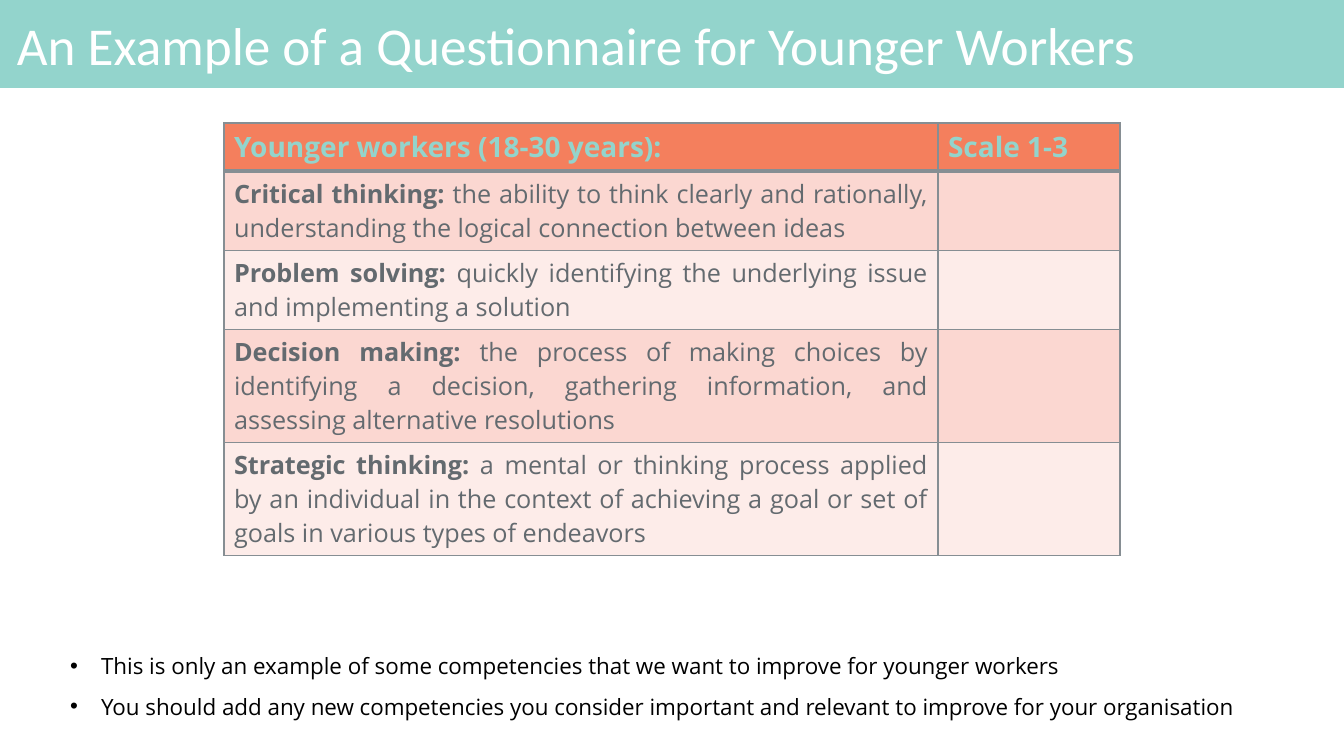
from dataclasses import dataclass

from lxml.etree import SubElement
from pptx import Presentation
from pptx.dml.color import RGBColor
from pptx.enum.shapes import MSO_SHAPE
from pptx.enum.text import MSO_ANCHOR, MSO_AUTO_SIZE, PP_ALIGN
from pptx.oxml import parse_xml
from pptx.oxml.ns import nsdecls, qn
from pptx.util import Pt

EMU_PER_PX = 914400 / 100.8


def px(length):
    return round(length * EMU_PER_PX)


@dataclass(frozen=True)
class Theme:
    teal: str = "93D4CC"
    white: str = "FFFFFF"
    black: str = "000000"
    grey: str = "636A6F"
    border: str = "868E93"
    orange: str = "F47F5D"
    bands: tuple = ("FBD7D1", "FDECE9")
    title_font: str = "Calibri"
    body_font: str = "Open Sans"
    title_size: int = 38
    header_size: int = 20
    cell_size: int = 18
    list_size: int = 16


class SlideBuilder:
    def __init__(self, page, theme):
        self.page = page
        self.theme = theme

    def place(self, shape, left, top, width, height):
        shape.left, shape.top = px(left), px(top)
        shape.width, shape.height = px(width), px(height)

    def style(self, font, name, size, color, bold=False):
        font.name, font.size, font.bold = name, Pt(size), bold
        font.color.rgb = RGBColor.from_string(color)

    def band(self, left, top, width, height):
        """Draw the title background behind every other shape."""
        box = self.page.shapes.add_shape(
            MSO_SHAPE.RECTANGLE, px(left), px(top), px(width), px(height))
        box.shadow.inherit = False
        box.fill.solid()
        box.fill.fore_color.rgb = RGBColor.from_string(self.theme.teal)
        box.line.fill.background()
        self.page.shapes.element.insert(2, box.element)

    def title(self, text, *bounds):
        box = self.page.shapes.title
        self.place(box, *bounds)
        frame = box.text_frame
        frame.text = text
        frame.auto_size = MSO_AUTO_SIZE.NONE
        frame.vertical_anchor = MSO_ANCHOR.MIDDLE
        frame.margin_left = frame.margin_right = px(6)
        frame.margin_top = frame.margin_bottom = px(6)
        para = frame.paragraphs[0]
        para.alignment = PP_ALIGN.LEFT
        para.line_spacing = 0.9
        self.style(para.font, self.theme.title_font, self.theme.title_size, self.theme.white)

    def bullets(self, lines, *bounds):
        box = self.page.placeholders[1]
        self.place(box, *bounds)
        frame = box.text_frame
        frame.text = "\n".join(lines)
        frame.auto_size = MSO_AUTO_SIZE.NONE
        for para in frame.paragraphs:
            para.line_spacing = 1.5
            para.space_before = Pt(0)
            self.style(para.font, self.theme.body_font, self.theme.list_size, self.theme.black)
            properties = para._p.get_or_add_pPr()
            properties.set("marL", str(px(31)))
            properties.set("indent", str(-px(31)))
            bullet_font = SubElement(properties, qn("a:buFont"))
            bullet_font.set("typeface", "Arial")
            SubElement(properties, qn("a:buChar")).set("char", "•")
            properties.append(properties.find(qn("a:defRPr")))

    def cell(self, cell, fill, top=1, bottom=1):
        """Fill a cell and border it; top and bottom are line widths in points."""
        cell.fill.solid()
        cell.fill.fore_color.rgb = RGBColor.from_string(fill)
        cell.vertical_anchor = MSO_ANCHOR.MIDDLE
        properties = cell._tc.get_or_add_tcPr()
        widths = {"lnL": 1, "lnR": 1, "lnT": top, "lnB": bottom}
        for index, (side, width) in enumerate(widths.items()):
            properties.insert(index, parse_xml(
                f'<a:{side} {nsdecls("a")} w="{Pt(width)}"><a:solidFill>'
                f'<a:srgbClr val="{self.theme.border}"/></a:solidFill></a:{side}>'))

    def questionnaire(self, headings, competencies, left, top, columns, heights):
        theme = self.theme
        table = self.page.shapes.add_table(
            len(heights), len(columns), px(left), px(top),
            px(sum(columns)), px(sum(heights))).table
        for column, width in zip(table.columns, columns):
            column.width = px(width)
        for row, height in zip(table.rows, heights):
            row.height = px(height)
        for index, heading in enumerate(headings):
            cell = table.cell(0, index)
            self.cell(cell, theme.orange, bottom=3)
            cell.text = heading
            self.style(cell.text_frame.paragraphs[0].runs[0].font,
                       theme.body_font, theme.header_size, theme.teal, True)
        for number, (name, meaning) in enumerate(competencies, 1):
            for cell in table.rows[number].cells:
                self.cell(cell, theme.bands[(number - 1) % 2], top=3 if number == 1 else 1)
            para = table.cell(number, 0).text_frame.paragraphs[0]
            para.alignment = PP_ALIGN.JUSTIFY
            for text, bold in ((f"{name}:", True), (f" {meaning}", False)):
                span = para.add_run()
                span.text = text
                self.style(span.font, theme.body_font, theme.cell_size, theme.grey, bold)


def main():
    deck = Presentation()
    deck.slide_width, deck.slide_height = px(1344), px(756)
    page = deck.slides.add_slide(deck.slide_layouts[1])
    builder = SlideBuilder(page, Theme())
    builder.band(0, 0, 1344, 88)
    builder.title("An Example of a Questionnaire for Younger Workers", 11, 9, 1316, 79)
    builder.questionnaire(
        ("Younger workers (18-30 years):", "Scale 1-3"),
        (
            ("Critical thinking", "the ability to think clearly and rationally, "
             "understanding the logical connection between ideas"),
            ("Problem solving", "quickly identifying the underlying issue "
             "and implementing a solution"),
            ("Decision making", "the process of making choices by identifying a decision, "
             "gathering information, and assessing alternative resolutions"),
            ("Strategic thinking", "a mental or thinking process applied by an individual in "
             "the context of achieving a goal or set of goals in various types of endeavors"),
        ),
        224, 123, (714, 182), (48, 79, 79, 113, 113))
    builder.bullets(
        (
            "This is only an example of some competencies that we want to improve "
            "for younger workers",
            "You should add any new competencies you consider important and relevant "
            "to improve for your organisation",
        ),
        60, 634, 1261, 92)
    deck.save("out.pptx")


if __name__ == "__main__":
    main()
